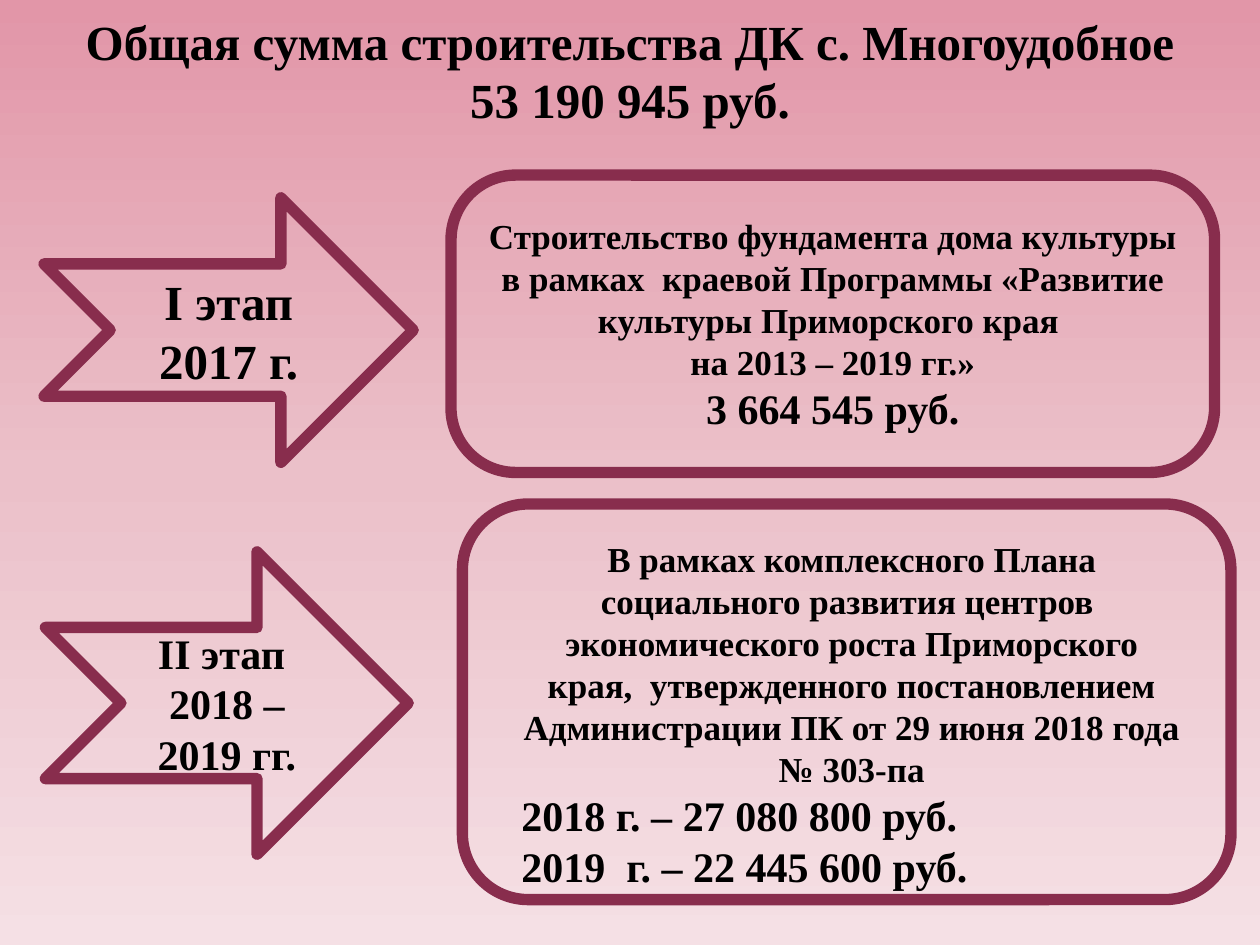
from copy import deepcopy
from dataclasses import dataclass

from lxml.etree import SubElement
from pptx import Presentation
from pptx.dml.color import RGBColor
from pptx.enum.shapes import MSO_SHAPE as Shape
from pptx.enum.text import MSO_ANCHOR as Anchor, MSO_AUTO_SIZE as AutoSize, PP_ALIGN as Align
from pptx.oxml.ns import qn
from pptx.util import Inches, Pt


@dataclass(frozen=True)
class Theme:
    font: str = "Times New Roman"
    ink: RGBColor = RGBColor(0, 0, 0)
    outline: RGBColor = RGBColor(0x88, 0x2D, 0x4D)
    backdrop: tuple = ("E296A8", "EBC0C9", "F5E0E5")
    outline_width: float = 6.5
    large: int = 28
    medium: int = 24
    body: int = 20


THEME = Theme()


def paint_background(page):
    fill = page.background.fill
    fill.gradient()
    fill.gradient_angle = 270
    first = fill.gradient_stops[0]._gs
    stop_list = first.getparent()
    stop_list.insert(1, deepcopy(first))
    for index, (stop, color) in enumerate(zip(fill.gradient_stops, THEME.backdrop)):
        stop.color.rgb = RGBColor.from_string(color)
        stop.position = index / 2


def write_lines(frame, lines, anchor=Anchor.MIDDLE):
    """Fill the frame with one paragraph per (text, size, alignment)."""
    frame.word_wrap = True
    frame.vertical_anchor = anchor
    for index, (text, size, align) in enumerate(lines):
        para = frame.paragraphs[0] if index == 0 else frame.add_paragraph()
        para.alignment = align
        add_span(para, text, size)


def add_span(para, text, size):
    span = para.add_run()
    span.text = text
    span.font.name = THEME.font
    span.font.size = Pt(size)
    span.font.bold = True
    span.font.color.rgb = THEME.ink


def add_outline(page, kind, box):
    shape = page.shapes.add_shape(kind, *map(Inches, box))
    shape.shadow.inherit = False
    shape.fill.background()
    shape.line.color.rgb = THEME.outline
    shape.line.width = Pt(THEME.outline_width)
    SubElement(shape.line._ln, qn("a:round"))
    return shape


def add_title(page, box, lines):
    title = page.shapes.title
    title.left, title.top, title.width, title.height = map(Inches, box)
    frame = title.text_frame
    frame.auto_size = AutoSize.NONE
    frame.vertical_anchor = Anchor.MIDDLE
    para = frame.paragraphs[0]
    para.alignment = Align.CENTER
    for index, line in enumerate(lines):
        if index:
            para.add_line_break()
        add_span(para, line, THEME.large)


def add_stage_arrow(page, box, lines, size):
    arrow = add_outline(page, Shape.NOTCHED_RIGHT_ARROW, box)
    write_lines(arrow.text_frame, [(line, size, Align.CENTER) for line in lines])


def add_panel(page, box):
    panel = add_outline(page, Shape.ROUNDED_RECTANGLE, box)
    return panel


def add_first_stage(page, arrow_box, panel_box):
    panel = add_panel(page, panel_box)
    panel.adjustments[0] = 0.217
    write_lines(panel.text_frame, [
        ("Строительство фундамента дома культуры в рамках  краевой Программы "
         "«Развитие культуры Приморского края ", THEME.body, Align.CENTER),
        ("на 2013 – 2019 гг.»", THEME.body, Align.CENTER),
        ("3 664 545 руб.", THEME.medium, Align.CENTER),
    ])
    add_stage_arrow(page, arrow_box, ["I этап", "2017 г."], THEME.large)


def add_second_stage(page, arrow_box, panel_box, text_box):
    add_panel(page, panel_box)
    details = page.shapes.add_textbox(*map(Inches, text_box))
    write_lines(details.text_frame, [
        ("В рамках комплексного Плана социального развития центров  экономического "
         "роста Приморского края,  утвержденного постановлением Администрации ПК "
         "от 29 июня 2018 года № 303-па", THEME.body, Align.CENTER),
        ("2018 г. – 27 080 800 руб.", THEME.medium, Align.LEFT),
        ("2019  г. – 22 445 600 руб.", THEME.medium, Align.LEFT),
    ], Anchor.TOP)
    add_stage_arrow(page, arrow_box, ["II этап ", "2018 – 2019 гг."], THEME.medium)


def main():
    deck = Presentation()
    deck.slide_width, deck.slide_height = Inches(10), Inches(7.5)
    page = deck.slides.add_slide(deck.slide_layouts.get_by_name("Title Only"))
    paint_background(page)
    add_title(page, (0.5, 0.3, 9, 0.51),
              ["Общая сумма строительства ДК с. Многоудобное", "53 190 945 руб."])
    add_first_stage(page, (0.35, 1.57, 2.93, 2.1), (3.58, 1.39, 6.06, 2.36))
    add_second_stage(page, (0.36, 4.38, 2.88, 2.4), (3.67, 4, 6.1, 3.14),
                     (4.04, 4.22, 5.44, 2.93))
    deck.save("out.pptx")


if __name__ == "__main__":
    main()
